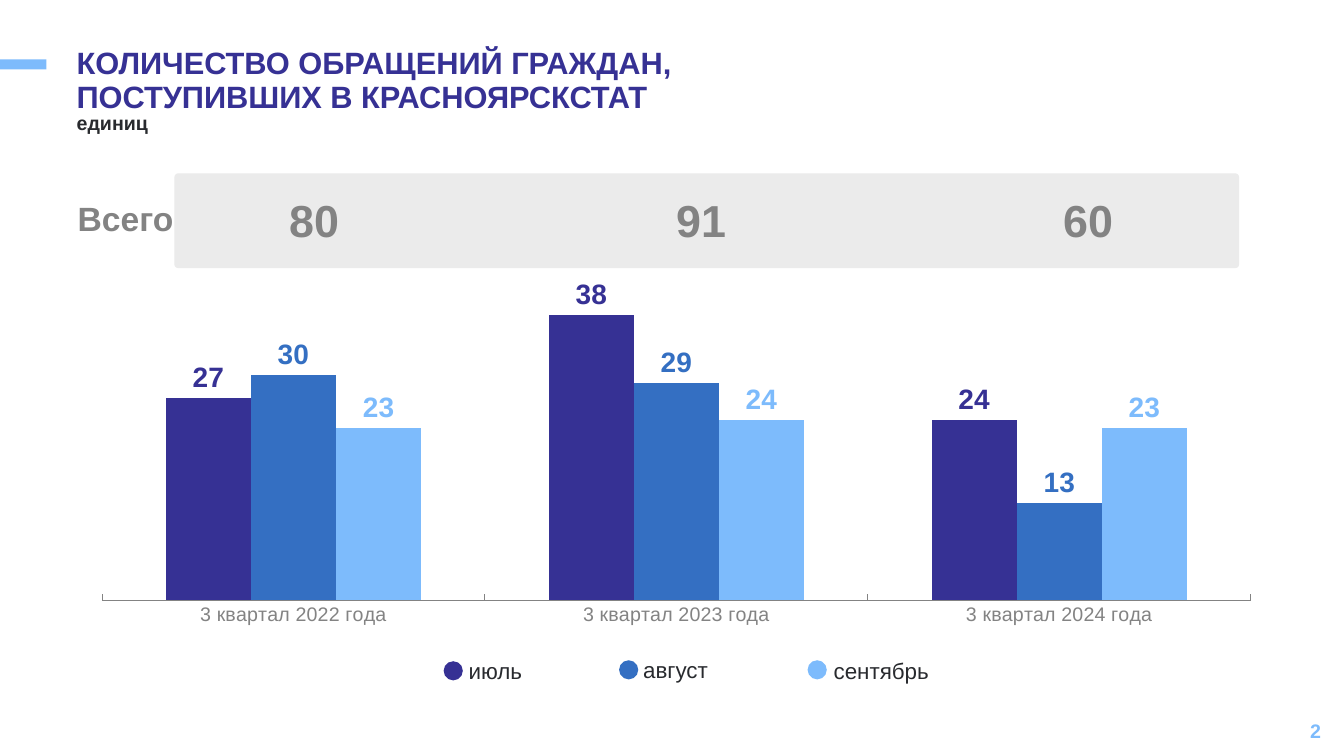
import dataclasses

import lxml.etree
import pptx
import pptx.chart.data
import pptx.dml.color
import pptx.enum.chart
import pptx.enum.shapes
import pptx.enum.text
import pptx.oxml
import pptx.oxml.ns
import pptx.util

Inches = pptx.util.Inches
Align = pptx.enum.text.PP_ALIGN
Anchor = pptx.enum.text.MSO_ANCHOR
Preset = pptx.enum.shapes.MSO_SHAPE
FONT = "Arial"
COLORS = {
    "navy": "363194",
    "blue": "346FC2",
    "sky": "7DBBFC",
    "dark": "282A2E",
    "gray": "838383",
    "band": "EBEBEB",
}


@dataclasses.dataclass
class Month:
    name: str
    color: str
    counts: tuple[int, ...]
    dot: tuple[float, float]
    label: tuple[float, float, float, float]


@dataclasses.dataclass
class Label:
    text: str
    box: tuple[float, float, float, float]
    size: int
    color: str
    bold: bool = True
    align: Align = Align.LEFT
    anchor: Anchor = Anchor.TOP
    wrap: bool = True


MONTHS = [
    Month("июль", "navy", (27, 38, 24), (4.4, 6.56), (4.55, 6.47, 0.74, 0.37)),
    Month("август", "blue", (30, 29, 13), (6.14, 6.55), (6.28, 6.46, 0.85, 0.37)),
    Month("сентябрь", "sky", (23, 24, 23), (8.01, 6.55), (8.17, 6.47, 1.16, 0.37)),
]
YEARS = (2022, 2023, 2024)
TITLE = Label("КОЛИЧЕСТВО ОБРАЩЕНИЙ ГРАЖДАН,\nПОСТУПИВШИХ В КРАСНОЯРСКСТАТ",
              (0.66, 0.43, 8.66, 0.57), 22, "navy")
UNIT = Label("единиц", (0.66, 1.08, 8.66, 0.4), 14, "dark")


def tint(name: str) -> pptx.dml.color.RGBColor:
    """Return a named colour."""
    return pptx.dml.color.RGBColor.from_string(COLORS[name])


def style(font, size: int, color: str, bold: bool) -> None:
    """Set the face, size, colour and weight of a font."""
    font.name = FONT
    font.size = pptx.util.Pt(size)
    font.bold = bold
    font.color.rgb = tint(color)


def write(shape, label: Label):
    """Write a label into a shape and return its paragraph."""
    shape.left, shape.top, shape.width, shape.height = map(Inches, label.box)
    frame = shape.text_frame
    frame.word_wrap = label.wrap
    frame.auto_size = pptx.enum.text.MSO_AUTO_SIZE.NONE
    frame.vertical_anchor = label.anchor
    para = frame.paragraphs[0]
    para.alignment = label.align
    for row, line in enumerate(label.text.split("\n")):
        if row:
            para.add_line_break()
        run = para.add_run()
        run.text = line
        style(run.font, label.size, label.color, label.bold)
    return para


def add_text(slide, label: Label) -> None:
    """Add a text box for a label."""
    write(slide.shapes.add_textbox(*map(Inches, label.box)), label)


def add_head(slide) -> None:
    """Fill the title and body placeholders."""
    for shape, label in zip(slide.placeholders, (TITLE, UNIT)):
        para = write(shape, label)
        para.line_spacing = 0.9
        para.space_before = pptx.util.Pt(0)
        props = para._p.get_or_add_pPr()
        props.set("marL", "0")
        props.set("indent", "0")
        lxml.etree.SubElement(props, pptx.oxml.ns.qn("a:buNone"))


def add_shape(slide, kind: Preset, box: tuple[float, ...], color: str):
    """Add a flat filled shape."""
    shape = slide.shapes.add_shape(kind, *map(Inches, box))
    shape.shadow.inherit = False
    shape.fill.solid()
    shape.fill.fore_color.rgb = tint(color)
    shape.line.fill.background()
    return shape


def place_plot(chart, box: tuple[float, ...]) -> None:
    """Fix the inner plot area as fractions of the chart."""
    area = chart._chartSpace.chart.plotArea
    for old in area.findall(pptx.oxml.ns.qn("c:layout")):
        area.remove(old)
    parts = [("layoutTarget", "inner"), ("xMode", "edge"), ("yMode", "edge")]
    parts += zip("xywh", box)
    inner = "".join(f'<c:{tag} val="{val}"/>' for tag, val in parts)
    space = pptx.oxml.ns.nsdecls("c")
    area.insert(0, pptx.oxml.parse_xml(
        f"<c:layout {space}><c:manualLayout>{inner}</c:manualLayout></c:layout>"))


def add_chart(slide) -> None:
    """Add the clustered columns by quarter and month."""
    data = pptx.chart.data.CategoryChartData()
    data.categories = [f"3 квартал {year} года" for year in YEARS]
    for month in MONTHS:
        data.add_series(month.name, month.counts)
    enum = pptx.enum.chart
    box = map(Inches, (0.86, 1.53, 11.71, 4.91))
    chart = slide.shapes.add_chart(enum.XL_CHART_TYPE.COLUMN_CLUSTERED, *box, data).chart
    chart.has_legend = False
    chart.has_title = False
    style(chart.font, 18, "dark", False)
    place_plot(chart, (0.013, 0.295, 0.973, 0.606))
    value = chart.value_axis
    value.visible = False
    value.has_major_gridlines = False
    value.minimum_scale, value.maximum_scale = 0, 40
    base = chart.category_axis
    base.major_tick_mark = enum.XL_TICK_MARK.INSIDE
    base.format.line.color.rgb = tint("gray")
    base.format.line.width = pptx.util.Pt(0.75)
    style(base.tick_labels.font, 14, "gray", False)
    plot = chart.plots[0]
    plot.vary_by_categories = False
    plot.gap_width, plot.overlap = 150, 0
    for series, month in zip(plot.series, MONTHS):
        series.format.fill.solid()
        series.format.fill.fore_color.rgb = tint(month.color)
        marks = series.data_labels
        marks.show_value = True
        marks.position = enum.XL_LABEL_POSITION.OUTSIDE_END
        style(marks.font, 20, month.color, True)


def main() -> None:
    """Build and save the slide."""
    deck = pptx.Presentation()
    deck.slide_width, deck.slide_height = Inches(13.33), Inches(7.5)
    slide = deck.slides.add_slide(deck.slide_layouts[1])
    add_head(slide)
    add_shape(slide, Preset.RECTANGLE, (0, 0.59, 0.46, 0.1), "sky")
    band = add_shape(slide, Preset.ROUNDED_RECTANGLE, (1.73, 1.72, 10.56, 0.94), "band")
    band.adjustments[0] = 0.04
    add_chart(slide)
    for month in MONTHS:
        add_shape(slide, Preset.OVAL, (*month.dot, 0.19, 0.19), month.color)
        add_text(slide, Label(month.name, month.label, 16, "dark", False, wrap=False))
    add_text(slide, Label("Всего", (0.44, 1.91, 1.61, 0.57), 24, "gray", align=Align.CENTER))
    for col, counts in enumerate(zip(*(month.counts for month in MONTHS))):
        box = (1.72 + 3.84 * col, 1.86, 2.79, 0.55)
        add_text(slide, Label(str(sum(counts)), box, 32, "gray", align=Align.CENTER))
    add_text(slide, Label("2", (10.2, 7.05, 3, 0.4), 14, "sky",
                          align=Align.RIGHT, anchor=Anchor.MIDDLE))
    deck.save("out.pptx")


if __name__ == "__main__":
    main()
